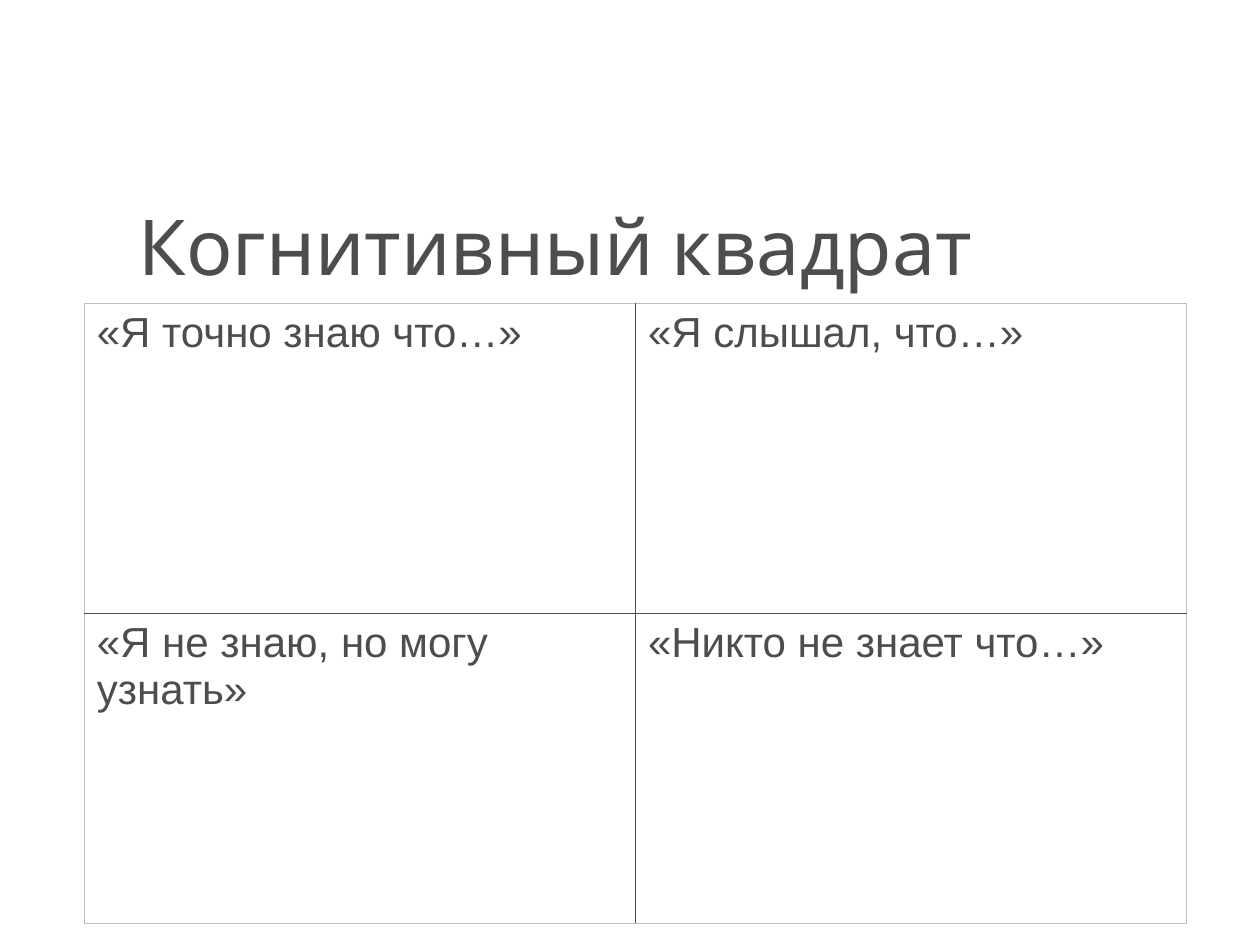
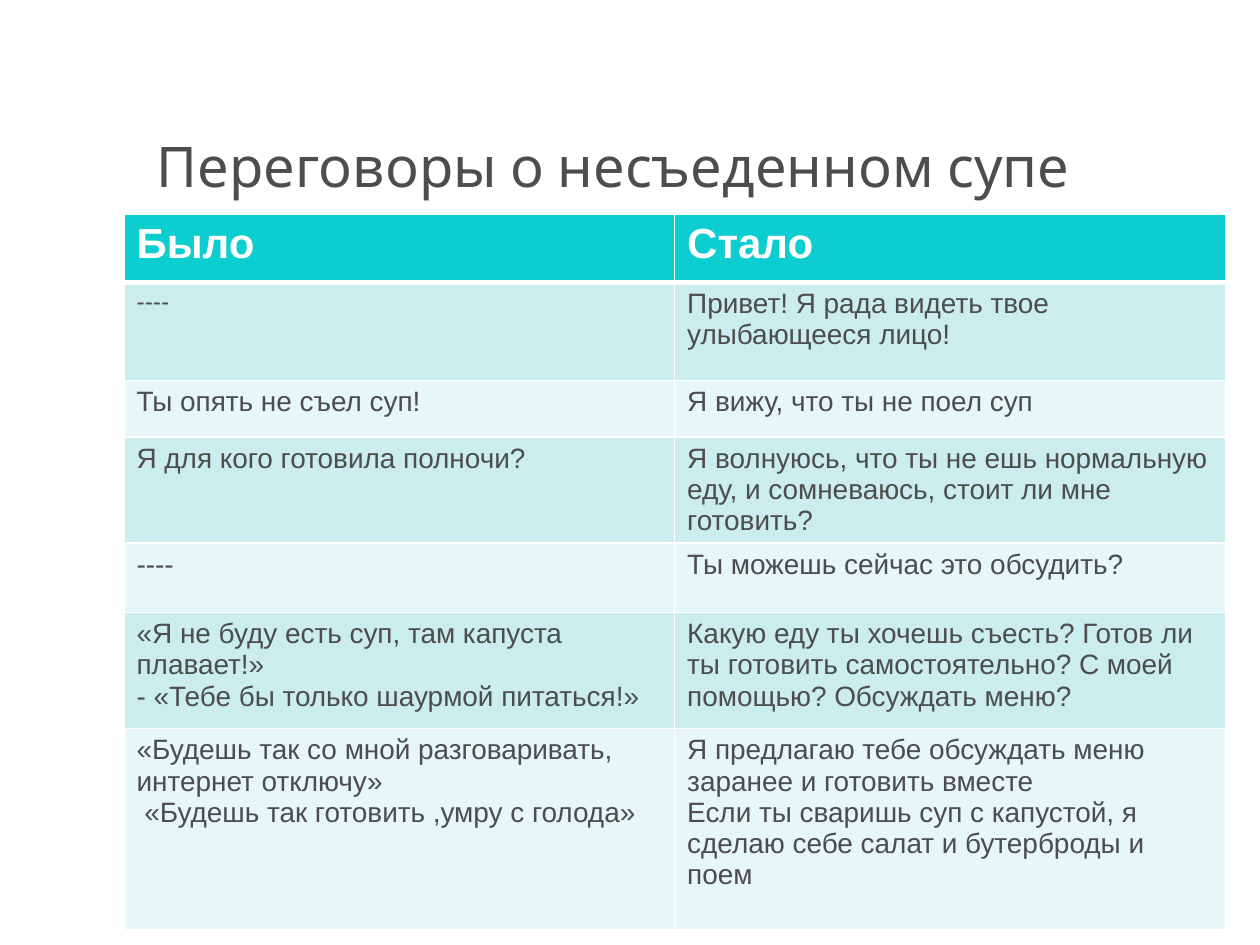
from dataclasses import dataclass

from lxml.etree import SubElement
from pptx import Presentation
from pptx.dml.color import RGBColor
from pptx.enum.text import MSO_ANCHOR as Anchor, MSO_AUTO_SIZE as AutoSize, PP_ALIGN as Align
from pptx.oxml.ns import qn
from pptx.util import Cm, Pt


@dataclass(frozen=True)
class Theme:
    ink: str = "4D4D4D"
    outline: str = "BFBFBF"
    white: str = "FFFFFF"
    header: str = "0CCDCF"
    bands: tuple[str, str] = ("CCEDED", "E7F6F6")
    title_font: str = "Karla"
    cell_font: str = "Arial"
    large: float = 24
    normal: float = 16
    small: float = 14


THEME = Theme()


@dataclass(frozen=True)
class Heading:
    text: str
    left: float
    top: float
    size: float


@dataclass(frozen=True)
class Border:
    color: str
    width: float = 1


@dataclass(frozen=True)
class CellStyle:
    size: float
    color: str = THEME.ink
    bold: bool = False
    fill: str | None = None


@dataclass(frozen=True)
class Grid:
    left: float
    top: float
    column_width: float
    row_heights: tuple[float, ...]
    texts: tuple[tuple[str, str], ...]


def style_font(font, name: str, size: float, color: str, bold: bool = False) -> None:
    font.name, font.size, font.bold = name, Pt(size), bold
    font.color.rgb = RGBColor.from_string(color)


def add_heading_slide(deck, heading: Heading):
    """Add a slide whose title placeholder carries the heading."""
    slide = deck.slides.add_slide(deck.slide_layouts[5])
    title = slide.shapes.title
    title.left, title.top = Cm(heading.left), Cm(heading.top)
    title.width, title.height = Cm(20.32), Cm(1.98)
    frame = title.text_frame
    frame.text = heading.text
    frame.word_wrap, frame.auto_size = True, AutoSize.NONE
    frame.vertical_anchor = Anchor.MIDDLE
    line = frame.paragraphs[0]
    line.alignment = Align.LEFT
    style_font(line.runs[0].font, THEME.title_font, heading.size, THEME.ink)
    return slide


def add_grid(slide, grid: Grid):
    """Add a table with the texts and sizes of the grid."""
    rows, columns = len(grid.texts), len(grid.texts[0])
    table = slide.shapes.add_table(
        rows, columns, Cm(grid.left), Cm(grid.top),
        Cm(grid.column_width * columns), Cm(sum(grid.row_heights))).table
    table.first_row = table.horz_banding = False
    for column in table.columns:
        column.width = Cm(grid.column_width)
    for row, height, texts in zip(table.rows, grid.row_heights, grid.texts):
        row.height = Cm(height)
        for cell, text in zip(row.cells, texts):
            cell.text_frame.text = text
    return table


def style_cell(cell, style: CellStyle, borders: dict[str, Border]) -> None:
    """Draw borders (keys L, R, T, B), then the fill and the text style."""
    properties = cell._tc.get_or_add_tcPr()
    for side in "LRTB":
        border = borders[side]
        line = SubElement(properties, qn(f"a:ln{side}"), w=str(Pt(border.width)))
        fill = SubElement(line, qn("a:solidFill"))
        SubElement(fill, qn("a:srgbClr"), val=border.color)
    if style.fill:
        cell.fill.solid()
        cell.fill.fore_color.rgb = RGBColor.from_string(style.fill)
    else:
        cell.fill.background()
    for paragraph in cell.text_frame.paragraphs:
        paragraph.alignment = Align.LEFT
        for run in paragraph.runs:
            style_font(run.font, THEME.cell_font, style.size, style.color, style.bold)


def build_cognitive_square(deck) -> None:
    slide = add_heading_slide(deck, Heading("Когнитивный квадрат", 2.54, 3.94, 44))
    square = add_grid(slide, Grid(1.7, 6.12, 11.11, (6.25, 6.25), (
        ("«Я точно знаю что…»", "«Я слышал, что…»"),
        ("«Я не знаю, но могу узнать»", "«Никто не знает что…»"),
    )))
    inner, outer = Border(THEME.ink), Border(THEME.outline)
    for r, row in enumerate(square.rows):
        for c, cell in enumerate(row.cells):
            style_cell(cell, CellStyle(THEME.large), {
                "L": inner if c else outer, "R": outer if c else inner,
                "T": inner if r else outer, "B": outer if r else inner})


def build_soup_talks(deck) -> None:
    slide = add_heading_slide(deck, Heading("Переговоры о несъеденном супе", 2.9, 2.34, 32))
    heights = (1.37, 1.98, 1.14, 2.11, 1.4, 2.34, 4.06)
    talks = add_grid(slide, Grid(2.5, 4.32, 11.1, heights, (
        ("Было", "Стало"),
        ("----", "Привет! Я рада видеть твое улыбающееся лицо!"),
        ("Ты опять не съел суп!", "Я вижу, что ты не поел суп"),
        ("Я для кого готовила полночи?",
         "Я волнуюсь, что ты не ешь нормальную еду, и сомневаюсь, стоит ли мне готовить?"),
        ("----", "Ты можешь сейчас это обсудить?"),
        ("«Я не буду есть суп, там капуста плавает!»\n"
         "- «Тебе бы только шаурмой питаться!»",
         "Какую еду ты хочешь съесть? Готов ли ты готовить самостоятельно? "
         "С моей помощью? Обсуждать меню?"),
        ("«Будешь так со мной разговаривать, интернет отключу»\n"
         " «Будешь так готовить ,умру с голода»",
         "Я предлагаю тебе обсуждать меню заранее и готовить вместе\n"
         "Если ты сваришь суп с капустой, я сделаю себе салат и бутерброды и поем"),
    )))
    talks.first_row = talks.horz_banding = True
    thin, thick = Border(THEME.white), Border(THEME.white, 3)
    for r, row in enumerate(talks.rows):
        for c, cell in enumerate(row.cells):
            if r == 0:
                style = CellStyle(THEME.large, THEME.white, True, THEME.header)
            else:
                size = THEME.small if (r, c) == (1, 0) else THEME.normal
                style = CellStyle(size, fill=THEME.bands[(r - 1) % 2])
            style_cell(cell, style, {
                "L": thin, "R": thin,
                "T": thick if r == 1 else thin, "B": thick if r == 0 else thin})


def main() -> None:
    deck = Presentation()
    deck.slide_width, deck.slide_height = Cm(25.4), Cm(19.05)
    build_cognitive_square(deck)
    build_soup_talks(deck)
    deck.save("out.pptx")


if __name__ == "__main__":
    main()
